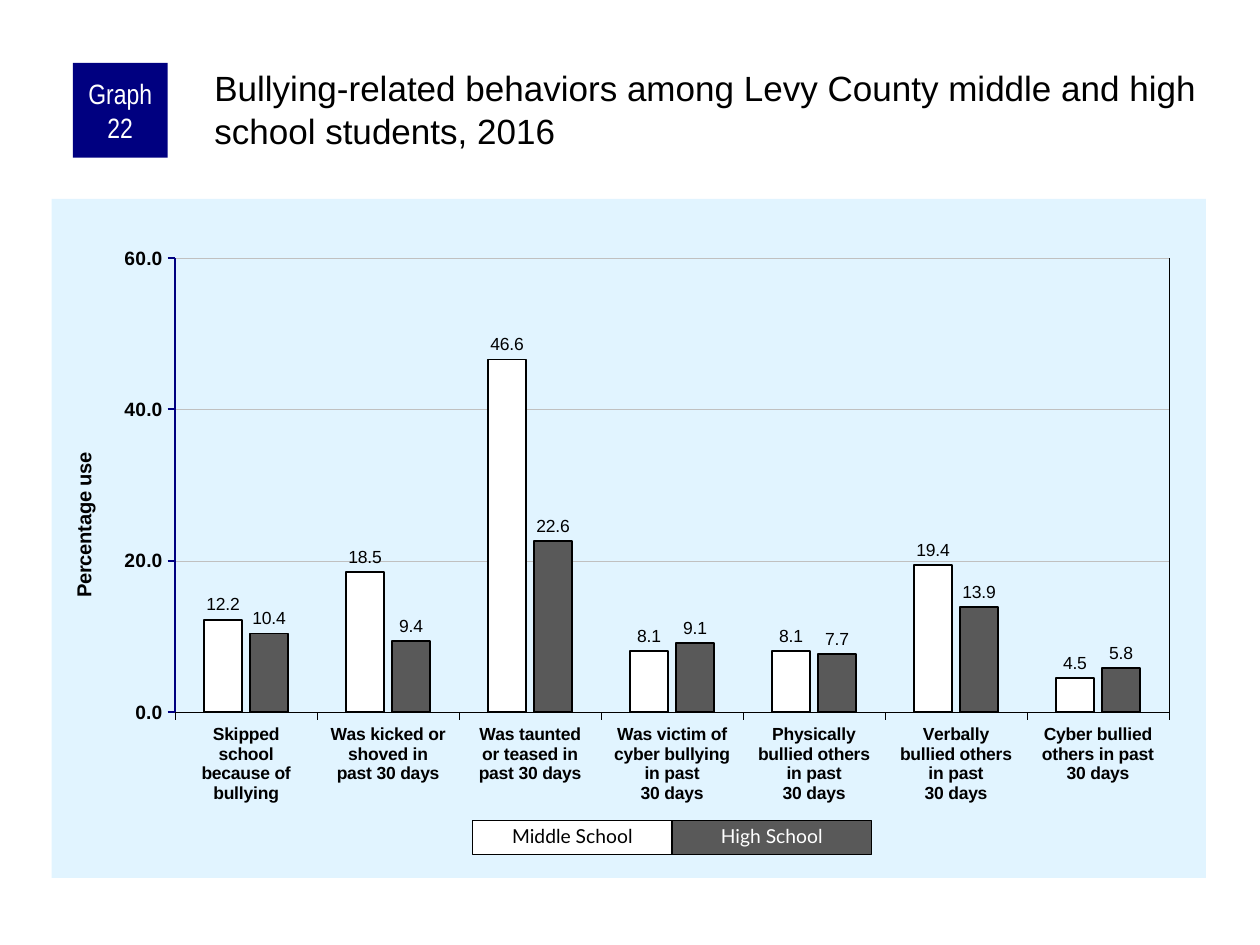
from lxml import etree
from pptx import Presentation
from pptx.chart.data import CategoryChartData
from pptx.dml.color import RGBColor
from pptx.enum.chart import XL_CHART_TYPE as ChartType, XL_LABEL_POSITION as LabelPosition
from pptx.enum.chart import XL_TICK_MARK as TickMark
from pptx.enum.shapes import MSO_CONNECTOR as Connector, MSO_SHAPE as Shape
from pptx.enum.text import MSO_ANCHOR as Anchor, PP_ALIGN as Align
from pptx.oxml import parse_xml
from pptx.oxml.ns import nsdecls, qn
from pptx.util import Cm, Pt

COLORS = {"black": "000000", "white": "FFFFFF", "navy": "000080",
          "gray": "595959", "grid": "C0C0C0", "panel": "E1F4FF"}

CATEGORIES = [
    "Skipped\nschool\nbecause of\nbullying",
    "Was kicked or\nshoved in\npast 30 days",
    "Was taunted\nor teased in\npast 30 days",
    "Was victim of\ncyber bullying\nin past\n30 days",
    "Physically\nbullied others\nin past\n30 days",
    "Verbally\nbullied others\nin past\n30 days",
    "Cyber bullied\nothers in past\n30 days",
]
# Name, bar colour, legend text colour, values
SERIES = [
    ("Middle School", "white", "black", [12.2, 18.5, 46.6, 8.1, 8.1, 19.4, 4.5]),
    ("High School", "gray", "white", [10.4, 9.4, 22.6, 9.1, 7.7, 13.9, 5.8]),
]
CHART_BOX = (1.04, 4.01, 23.27, 13.69)
PLOT_AREA = (0.107, 0.087, 0.861, 0.669)  # fractions of the chart box


def color(name):
    return RGBColor.from_string(COLORS[name])


class SlideBuilder:
    def __init__(self, page, font="Arial"):
        self.page = page
        self.font = font

    def set_font(self, font, size, ink="black", bold=False, name=None):
        font.name = name or self.font
        font.size = Pt(size)
        font.bold = bold
        font.color.rgb = color(ink)

    def set_line(self, line, ink, width):
        line.color.rgb = color(ink)
        line.width = Pt(width)

    def title(self, text, left, top, width, height):
        box = self.page.shapes.title
        box.left, box.top, box.width, box.height = map(Cm, (left, top, width, height))
        frame = box.text_frame
        frame.text = text
        frame.word_wrap = True
        frame.vertical_anchor = Anchor.TOP
        frame.margin_left = frame.margin_top = Cm(0.08)
        frame.margin_right = frame.margin_bottom = 0
        para = frame.paragraphs[0]
        para.alignment = Align.LEFT
        self.set_font(para.font, 20)

    def label_box(self, text, left, top, width, height, fill, ink, size, font,
                  border=None, spacing=1.0):
        box = self.page.shapes.add_shape(Shape.RECTANGLE, *map(Cm, (left, top, width, height)))
        box.shadow.inherit = False
        box.fill.solid()
        box.fill.fore_color.rgb = color(fill)
        if border:
            self.set_line(box.line, border, 0.75)
        else:
            box.line.fill.background()
        frame = box.text_frame
        frame.text = text
        frame.word_wrap = True
        frame.vertical_anchor = Anchor.MIDDLE
        frame.margin_left = frame.margin_right = Cm(0.13)
        frame.margin_top = frame.margin_bottom = 0
        para = frame.paragraphs[0]
        para.alignment = Align.CENTER
        para.line_spacing = spacing
        self.set_font(para.font, size, ink, name=font)

    def line(self, x1, y1, x2, y2, ink, width):
        link = self.page.shapes.add_connector(Connector.STRAIGHT, *map(Cm, (x1, y1, x2, y2)))
        self.set_line(link.line, ink, width)
        etree.SubElement(link._element.spPr, qn("a:effectLst"))

    def column_chart(self, left, top, width, height):
        data = CategoryChartData(number_format="0.0")
        data.categories = CATEGORIES
        for name, _, _, values in SERIES:
            data.add_series(name, values)
        chart = self.page.shapes.add_chart(
            ChartType.COLUMN_CLUSTERED, *map(Cm, (left, top, width, height)), data).chart
        chart.has_title = chart.has_legend = False
        self.set_font(chart.font, 11.5)
        self.style_bars(chart.plots[0])
        self.style_axes(chart.category_axis, chart.value_axis)
        self.style_areas(chart._chartSpace.find(qn("c:chart")))

    def style_bars(self, plot):
        plot.gap_width, plot.overlap = 150, -20
        plot.vary_by_categories = False
        for series, (_, fill, _, _) in zip(plot.series, SERIES):
            series.format.fill.solid()
            series.format.fill.fore_color.rgb = color(fill)
            self.set_line(series.format.line, "black", 1)
            labels = series.data_labels
            labels.show_value = True
            labels.number_format, labels.number_format_is_linked = "0.0", False
            labels.position = LabelPosition.OUTSIDE_END
            self.set_font(labels.font, 10)

    def style_axes(self, categories, values):
        for axis, size, ink, width in ((categories, 10, "black", 0.25),
                                       (values, 11, "navy", 1)):
            axis.major_tick_mark, axis.minor_tick_mark = TickMark.OUTSIDE, TickMark.NONE
            self.set_font(axis.tick_labels.font, size, bold=True)
            self.set_line(axis.format.line, ink, width)
        values.minimum_scale, values.maximum_scale, values.major_unit = 0, 60, 20
        values.tick_labels.number_format = "0.0"
        values.tick_labels.number_format_is_linked = False
        self.set_line(values.major_gridlines.format.line, "grid", 0.25)
        values.axis_title.text_frame.text = "Percentage use"
        self.set_font(values.axis_title.text_frame.paragraphs[0].font, 11.5, bold=True)

    def style_areas(self, chart_xml):
        # Panel fill
        chart_xml.addnext(parse_xml(
            f'<c:spPr {nsdecls("c", "a")}><a:solidFill><a:srgbClr val="{COLORS["panel"]}"/>'
            '</a:solidFill><a:ln><a:noFill/></a:ln></c:spPr>'))
        # Inner plot position
        plot_area = chart_xml.find(qn("c:plotArea"))
        for old in plot_area.findall(qn("c:layout")):
            plot_area.remove(old)
        modes = "".join(f'<c:{key}Mode val="edge"/>' for key in "xy")
        sizes = "".join(f'<c:{key} val="{value}"/>' for key, value in zip("xywh", PLOT_AREA))
        plot_area.insert(0, parse_xml(
            f'<c:layout {nsdecls("c")}><c:manualLayout><c:layoutTarget val="inner"/>'
            f'{modes}{sizes}</c:manualLayout></c:layout>'))


def main():
    deck = Presentation()
    deck.slide_width, deck.slide_height = Cm(25.4), Cm(19.05)
    builder = SlideBuilder(deck.slides.add_slide(deck.slide_layouts[5]))

    # Heading
    builder.title("Bullying-related behaviors among Levy County middle and high "
                  "school students, 2016", 4.24, 1.27, 20.12, 2.11)

    # Chart, closed by a line at the right edge of the plot
    builder.column_chart(*CHART_BOX)
    left, top, width, height = CHART_BOX
    x, y, w, h = PLOT_AREA
    right, plot_top = left + (x + w) * width, top + y * height
    builder.line(right, plot_top, right, plot_top + h * height, "black", 0.25)

    # Graph number
    builder.label_box("Graph 22", 1.47, 1.27, 1.91, 1.91, "navy", "white", 16, "Arial Narrow")

    # Legend
    key_width = 4.02
    for index, (name, fill, ink, _) in enumerate(SERIES):
        builder.label_box(name, 9.53 + index * key_width, 16.54, key_width, 0.69,
                          fill, ink, 11, "Lato", border="black", spacing=0.9)

    deck.save("out.pptx")


if __name__ == "__main__":
    main()
